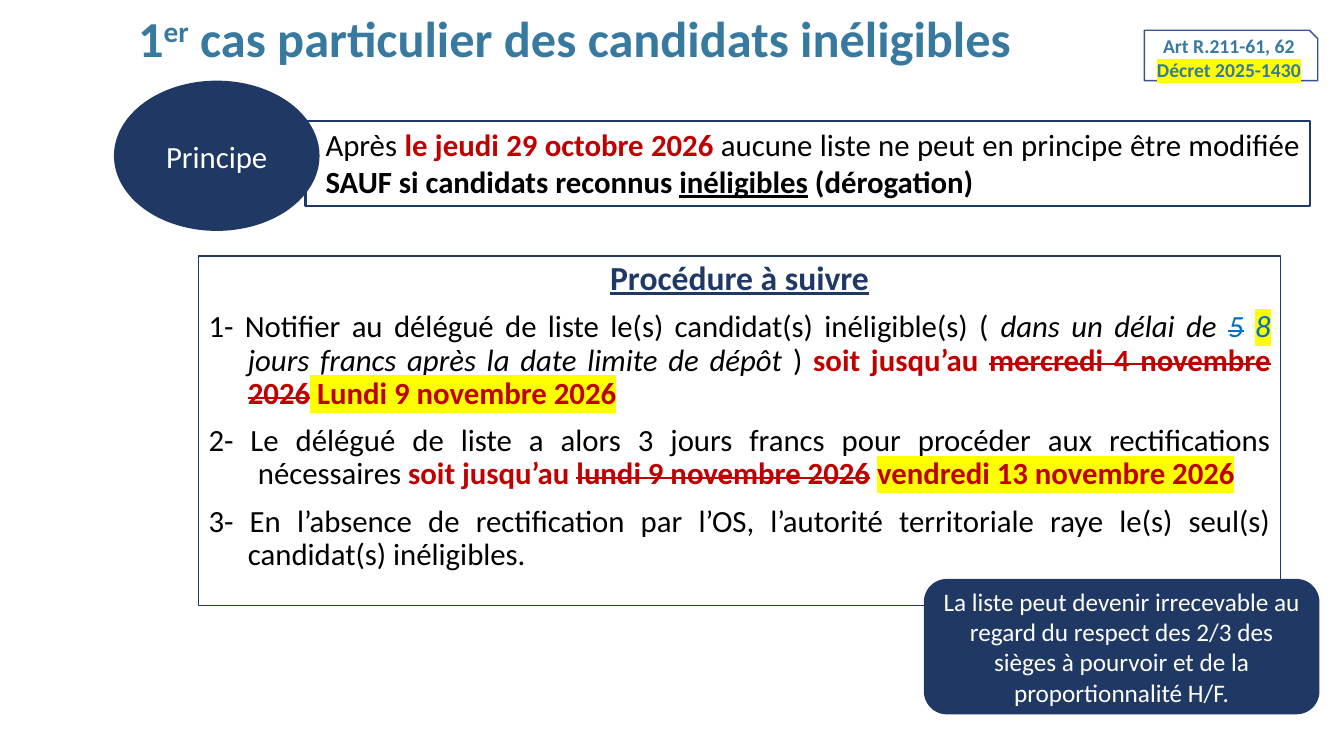
from lxml.etree import SubElement
from pptx import Presentation
from pptx.dml.color import RGBColor
from pptx.enum.shapes import MSO_SHAPE
from pptx.enum.text import MSO_ANCHOR, PP_ALIGN
from pptx.oxml.ns import qn
from pptx.util import Inches, Pt

COLORS = {
    "navy": "203864", "teal": "3879A0", "frame": "325491", "red": "C00000",
    "blue": "0070C0", "black": "000000", "white": "FFFFFF", "yellow": "FFFF00",
}


def color(name):
    return RGBColor.from_string(COLORS[name])


class SlideBuilder:
    """Places elements on a grid of 100 columns by 100 rows."""

    font_name = "Calibri"

    def __init__(self, deck):
        self.column = deck.slide_width / 100
        self.row = deck.slide_height / 100
        self.page = deck.slides.add_slide(deck.slide_layouts[6])

    def area(self, left, top, width, height):
        return (round(left * self.column), round(top * self.row),
                round(width * self.column), round(height * self.row))

    def text_box(self, place, anchor=MSO_ANCHOR.TOP):
        box = self.page.shapes.add_textbox(*self.area(*place))
        return self.frame(box, anchor)

    def shape(self, kind, place, fill=None, line=None, width=1.0,
              anchor=MSO_ANCHOR.MIDDLE):
        box = self.page.shapes.add_shape(kind, *self.area(*place))
        box.shadow.inherit = False
        if fill:
            box.fill.solid()
            box.fill.fore_color.rgb = color(fill)
        else:
            box.fill.background()
        if line:
            box.line.color.rgb = color(line)
            box.line.width = Pt(width)
        else:
            box.line.fill.background()
        return self.frame(box, anchor)

    def frame(self, box, anchor):
        box.text_frame.word_wrap = True
        box.text_frame.vertical_anchor = anchor
        return box.text_frame

    def paragraph(self, frame, spans, size, align=PP_ALIGN.CENTER, spacing=1.0,
                  before=0, margin=0, hanging=0):
        """Adds spans given as (text, color, marks).

        Marks: b bold, i italic, u underline, s strike, h highlight, ^ superscript.
        """
        first = frame.paragraphs[0]
        para = frame.add_paragraph() if first.runs else first
        para.alignment = align
        para.line_spacing = spacing
        para.space_before = Pt(before)
        properties = para._p.get_or_add_pPr()
        properties.set("marL", str(round(margin * self.column)))
        properties.set("indent", str(round(-hanging * self.column)))
        for text, tint, marks in spans:
            self.span(para, text, tint, marks, size)

    def span(self, para, text, tint, marks, size):
        span = para.add_run()
        span.text = text
        font = span.font
        font.name, font.size = self.font_name, Pt(size)
        font.bold, font.italic = "b" in marks, "i" in marks
        font.underline = "u" in marks
        font.color.rgb = color(tint)
        properties = span._r.get_or_add_rPr()
        if "s" in marks:
            properties.set("strike", "sngStrike")
        if "^" in marks:
            properties.set("baseline", "30000")
        if "h" in marks:
            highlight = SubElement(properties, qn("a:highlight"))
            SubElement(highlight, qn("a:srgbClr")).set("val", COLORS["yellow"])
            properties.find(qn("a:solidFill")).addnext(highlight)


def main():
    deck = Presentation()
    deck.slide_width, deck.slide_height = Inches(13.33), Inches(7.5)
    slide = SlideBuilder(deck)

    # Title
    title = slide.text_box((9.53, 0, 69.6, 10.93), MSO_ANCHOR.MIDDLE)
    slide.paragraph(title, [
        ("1", "teal", "b"),
        ("er", "teal", "b^"),
        (" cas particulier des candidats inéligibles", "teal", "b"),
    ], 36, PP_ALIGN.LEFT, 0.9)

    # Procedure
    procedure = slide.shape(MSO_SHAPE.RECTANGLE, (14.78, 33.87, 80.5, 46.27),
                            line="navy", anchor=MSO_ANCHOR.TOP)
    slide.paragraph(procedure, [("Procédure à suivre", "navy", "bu")], 24, spacing=0.9)
    steps = [
        (2.93, [
            ("1- Notifier au délégué de liste le(s) candidat(s) inéligible(s) ( ", "black", ""),
            ("dans un délai de ", "black", "i"),
            ("5", "blue", "is"),
            (" ", "black", "i"),
            ("8", "blue", "ih"),
            (" jours francs après la date limite de dépôt ", "black", "i"),
            (") ", "black", ""),
            ("soit jusqu’au ", "red", "b"),
            ("mercredi 4 novembre 2026", "red", "bs"),
            (" Lundi 9 novembre 2026", "red", "bh"),
        ]),
        (3.68, [
            ("2- Le délégué de liste a alors 3 jours francs pour procéder aux "
             "rectifications nécessaires ", "black", ""),
            ("soit jusqu’au ", "red", "b"),
            ("lundi 9 novembre 2026", "red", "bs"),
            (" ", "red", "b"),
            ("vendredi 13 novembre 2026", "red", "bh"),
        ]),
        (2.93, [
            ("3- En l’absence de rectification par l’OS, l’autorité territoriale "
             "raye le(s) seul(s) candidat(s) inéligibles.", "black", ""),
        ]),
    ]
    for indent, spans in steps:
        slide.paragraph(procedure, spans, 22, PP_ALIGN.JUSTIFY, 0.9, before=10,
                        margin=indent, hanging=indent)

    # Principle
    principle = slide.shape(MSO_SHAPE.RECTANGLE, (22.73, 16, 74.72, 11.2),
                            line="navy", width=1.5, anchor=MSO_ANCHOR.TOP)
    slide.paragraph(principle, [
        ("Après ", "black", ""),
        ("le jeudi 29 octobre 2026 ", "red", "b"),
        ("aucune liste ne peut en principe être modifiée ", "black", ""),
        ("SAUF si candidats reconnus ", "black", "b"),
        ("inéligibles", "black", "bu"),
        (" (dérogation)", "black", "b"),
    ], 22, PP_ALIGN.JUSTIFY, margin=0.75)

    # Legal reference
    reference = slide.shape(MSO_SHAPE.SNIP_1_RECTANGLE, (85.15, 4, 12.9, 6.67),
                            line="frame")
    slide.paragraph(reference, [("Art R.211-61, 62", "teal", "b")], 14)
    slide.paragraph(reference, [("Décret 2025-1430", "teal", "bh")], 14)

    # Principle label
    label = slide.shape(MSO_SHAPE.OVAL, (8.48, 10.67, 15.3, 19.87), fill="navy")
    label.margin_left = label.margin_right = label.margin_top = label.margin_bottom = 0
    slide.paragraph(label, [("Principe", "white", "")], 22)

    # Warning
    warning = slide.shape(MSO_SHAPE.ROUNDED_RECTANGLE, (68.79, 76.67, 29.33, 17.73),
                          fill="navy", line="navy")
    slide.paragraph(warning, [
        ("La liste peut devenir irrecevable au regard du respect des 2/3 des "
         "sièges à pourvoir et de la proportionnalité H/F.", "white", ""),
    ], 18)

    deck.save("out.pptx")


if __name__ == "__main__":
    main()
